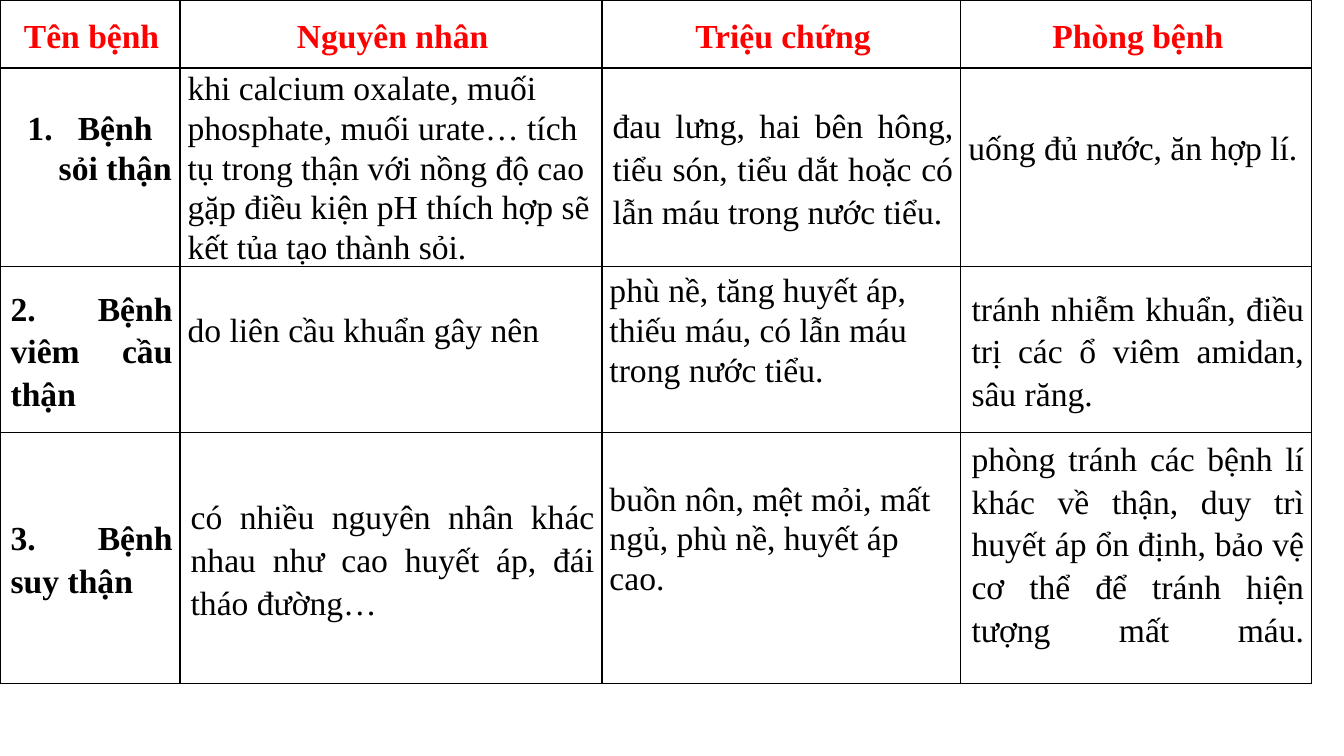
from lxml import etree
from pptx import Presentation
from pptx import util as u
from pptx.dml.color import RGBColor
from pptx.enum import text
from pptx.oxml import ns

Pt = u.Pt
RED = RGBColor(0xFF, 0, 0)
BLACK = RGBColor(0, 0, 0)
FONT = "Times New Roman"
LEFT, CENTER, JUSTIFY = text.PP_ALIGN.LEFT, text.PP_ALIGN.CENTER, text.PP_ALIGN.JUSTIFY

COLUMN_WIDTHS = [128.6, 301.4, 256.4, 250.6]
ROW_HEIGHTS = [48.6, 141.4, 118.6, 179.3]
BOTTOM_GAP = 28.4  # lifts the left-set texts by half a line

HEADINGS = ["Tên bệnh", "Nguyên nhân", "Triệu chứng", "Phòng bệnh"]
# Each cell: text, alignment, gap below
DISEASES = [
    [("Bệnh sỏi thận", CENTER, BOTTOM_GAP),
     ("khi calcium oxalate, muối phosphate, muối urate… tích tụ trong thận với "
      "nồng độ cao gặp điều kiện pH thích hợp sẽ kết tủa tạo thành sỏi.", LEFT, 0),
     ("đau lưng, hai bên hông, tiểu són, tiểu dắt hoặc có lẫn máu trong nước tiểu.",
      JUSTIFY, 0),
     ("uống đủ nước, ăn hợp lí.", LEFT, BOTTOM_GAP)],
    [("2. Bệnh viêm cầu thận", JUSTIFY, 0),
     ("do liên cầu khuẩn gây nên", LEFT, BOTTOM_GAP),
     ("phù nề, tăng huyết áp, thiếu máu, có lẫn máu trong nước tiểu.", LEFT, BOTTOM_GAP),
     ("tránh nhiễm khuẩn, điều trị các ổ viêm amidan, sâu răng.", JUSTIFY, 0)],
    [("3. Bệnh suy thận", JUSTIFY, 0),
     ("có nhiều nguyên nhân khác nhau như cao huyết áp, đái tháo đường…", JUSTIFY, 0),
     ("buồn nôn, mệt mỏi, mất ngủ, phù nề, huyết áp cao.", LEFT, BOTTOM_GAP),
     ("phòng tránh các bệnh lí khác về thận, duy trì huyết áp ổn định, bảo vệ cơ thể "
      "để tránh hiện tượng mất máu.\v", JUSTIFY, 0)],
]


def set_borders(cell, width=1):
    tcPr = cell._tc.get_or_add_tcPr()
    for side in ("lnL", "lnR", "lnT", "lnB"):
        ln = etree.SubElement(tcPr, ns.qn("a:" + side), w=str(Pt(width)))
        fill = etree.SubElement(ln, ns.qn("a:solidFill"))
        etree.SubElement(fill, ns.qn("a:srgbClr"), val=str(BLACK))


def set_indent(p, left, hanging=0):
    pPr = p._p.get_or_add_pPr()
    pPr.set("marL", str(Pt(left)))
    pPr.set("indent", str(-Pt(hanging)))


def number_paragraph(p):
    set_indent(p, 36, 36)
    pPr = p._p.get_or_add_pPr()
    etree.SubElement(pPr, ns.qn("a:buFont"), typeface="+mj-lt")
    etree.SubElement(pPr, ns.qn("a:buAutoNum"), type="arabicPeriod")


def fill_cell(cell, content, align, spacing, color=BLACK, bold=False, gap=0):
    set_borders(cell)
    cell.fill.background()
    cell.vertical_anchor = text.MSO_ANCHOR.MIDDLE
    cell.margin_left = cell.margin_right = Pt(5.4)
    cell.margin_top, cell.margin_bottom = 0, Pt(gap)
    p = cell.text_frame.paragraphs[0]
    p.text = content
    p.alignment, p.line_spacing = align, spacing
    for r in p.runs:
        r.font.name, r.font.size = FONT, Pt(24)
        r.font.bold, r.font.color.rgb = bold, color
    return p


def add_disease_table(slide, left, top, width, height):
    table = slide.shapes.add_table(len(DISEASES) + 1, len(HEADINGS), Pt(left), Pt(top),
                                   Pt(width), Pt(height)).table
    table.first_row = table.horz_banding = False
    for column, share in zip(table.columns, COLUMN_WIDTHS):
        column.width = Pt(width * share / sum(COLUMN_WIDTHS))
    for row, share in zip(table.rows, ROW_HEIGHTS):
        row.height = Pt(height * share / sum(ROW_HEIGHTS))
    for c, heading in enumerate(HEADINGS):
        set_indent(fill_cell(table.cell(0, c), heading, CENTER, 1.15, RED, True), 2.2)
    for r, disease in enumerate(DISEASES, start=1):
        for c, (content, align, gap) in enumerate(disease):
            spacing = 1.15 if align == JUSTIFY else 1.07
            p = fill_cell(table.cell(r, c), content, align, spacing, bold=c == 0, gap=gap)
            if align == JUSTIFY:
                set_indent(p, 2.2)
            elif align == CENTER:
                number_paragraph(p)


def main():
    prs = Presentation()
    prs.slide_width, prs.slide_height = Pt(960), Pt(540)
    slide = prs.slides.add_slide(prs.slide_layouts[6])
    add_disease_table(slide, 0, 0, sum(COLUMN_WIDTHS), sum(ROW_HEIGHTS))
    prs.save("out.pptx")


if __name__ == "__main__":
    main()
